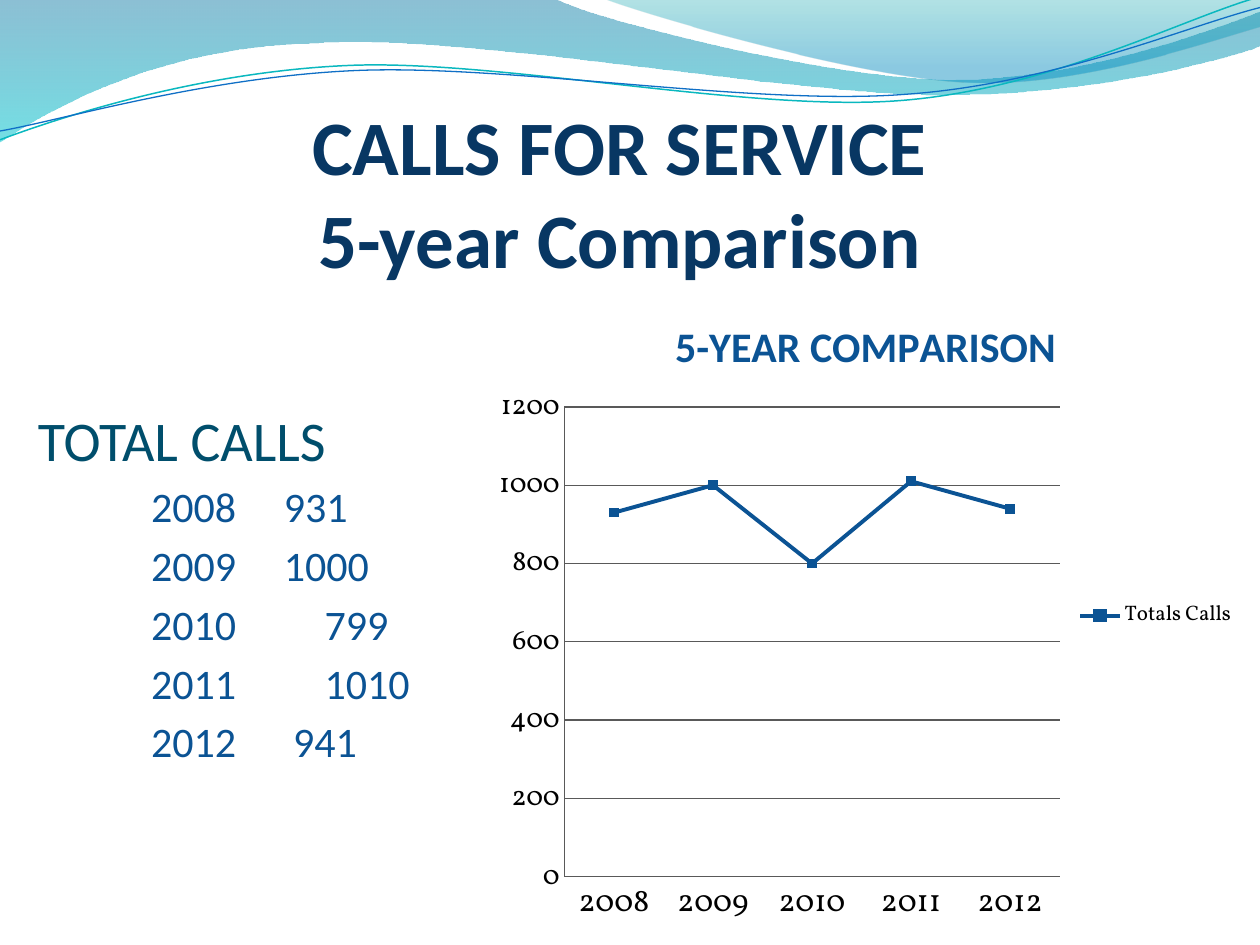
from lxml.etree import SubElement as Sub
from pptx import Presentation
from pptx.chart.data import CategoryChartData as Data
from pptx.dml.color import RGBColor as Rgb
from pptx.enum.chart import XL_CHART_TYPE as Kind, XL_LEGEND_POSITION as Side
from pptx.enum.chart import XL_MARKER_STYLE as Mark, XL_TICK_MARK as Tick
from pptx.enum.text import MSO_ANCHOR as Anchor, MSO_AUTO_SIZE as Fit, PP_ALIGN as Align
from pptx.oxml import parse_xml
from pptx.oxml.ns import nsdecls, qn
from pptx.util import Emu, Inches, Pt

# Content
TITLE = "CALLS FOR SERVICE\v5-year Comparison"
HEAD = "TOTAL CALLS"
# year, calls, extra gap between them in points
ROWS = [("2008", "931", 21.7), ("2009", "1000", 21.7), ("2010", "799", 45),
        ("2011", "1010", 45), ("2012", "941", 27.1)]
CHART = {"title": "5-YEAR COMPARISON", "name": "Totals Calls",
         "vals": [930, 1000, 800, 1010, 940]}

# Theme: colours and type
THEME = {
    "title": {"name": "Calibri", "size": Pt(44), "bold": True, "color": "083763"},
    "head": {"name": "Calibri", "size": Pt(32), "color": "004E6C"},
    "row": {"name": "Calibri", "size": Pt(24), "color": "0B5394"},
    "label": {"name": "Calibri", "size": Pt(24), "bold": True, "color": "0B5394"},
    "chart": {"name": "Vollkorn", "size": Pt(10), "color": "000000"},
    "cats": {"size": Pt(18)}, "vals": {"size": Pt(16)}, "key": {"size": Pt(12)},
    "line": "0B5394", "grid": "595959",
}

# Places as shares of the slide: left, top, width, height
W, H = Inches(10), Inches(7.5)
PLACE = {"title": (0.042, 0.19, 0.9, 0.11), "body": (-0.033, 0.422, 0.425, 0.487),
         "chart": (0.383, 0.308, 0.608, 0.687)}
# Plot area inside the chart, in inches
PLOT = (0.65, 0.92, 3.93, 3.73)

# Waves in inches: a pair is a straight step, six numbers are a curve
WAVES = [
    {"start": (0, 0), "steps": [
        (4.4, -0.01), (4.76, 0.17, 6.64, 0.63, 7.58, 0.63),
        (8.53, 0.63, 9.58, 0.26, 10, 0.09), (10.01, 0.36),
        (9.83, 0.44, 8.7, 0.76, 7.46, 0.75), (6.22, 0.75, 3.82, 0.28, 2.57, 0.34),
        (1.29, 0.36, 0.46, 0.83, -0.01, 1.13), (0, 0)],
     "fill": [(0, "0074A1", 45), (1, "00C6CF", 55)]},
    {"start": (4.79, -0.01), "steps": [
        (5.09, 0.11, 6.82, 0.62, 7.69, 0.65),
        (8.56, 0.69, 9.61, 0.32, 10, 0.21), (10, 0), (4.79, -0.01)],
     "fill": [(0, "00A1A9", 30), (0.8, "008BBF", 45)]},
    {"start": (0, 1.11), "steps": [
        (0.48, 0.93, 1.58, 0.57, 2.77, 0.52), (3.95, 0.47, 5.93, 0.89, 7.13, 0.8),
        (8.33, 0.71, 9.38, 0.15, 9.98, -0.02)],
     "line": ("0AB8BF", 0.85)},
    {"start": (0, 1.04), "steps": [
        (0.47, 0.96, 1.64, 0.61, 2.83, 0.56), (4.03, 0.51, 5.97, 0.84, 7.17, 0.75),
        (8.36, 0.67, 9.41, 0.21, 10, 0.06)],
     "line": ("0F6FC6", 0.75)},
]


def put(obj, vals):
    for key, val in vals.items():
        if key == "color":
            obj.color.rgb = Rgb.from_string(val)
        else:
            setattr(obj, key, val)


def box(name):
    return [Emu(round(part * size)) for part, size in zip(PLACE[name], (W, H, W, H))]


def move(shape, name):
    put(shape, dict(zip(("left", "top", "width", "height"), box(name))))


def bend(shape, steps):
    """Turn the straight steps that have handles into curves."""
    lines = list(shape._element.spPr.iter(qn("a:lnTo")))
    for node, step in zip(lines, steps):
        if len(step) == 6:
            curve = node.makeelement(qn("a:cubicBezTo"))
            for x, y in zip(step[::2], step[1::2]):
                Sub(curve, qn("a:pt"), x=str(Inches(x) - shape.left),
                    y=str(Inches(y) - shape.top))
            node.getparent().replace(node, curve)


def wave(slide, rank, start, steps, fill=None, line=None):
    pen = slide.shapes.build_freeform(*map(Inches, start), scale=1.0)
    ends = [tuple(map(Inches, step[-2:])) for step in steps]
    pen.add_line_segments(ends, close=bool(fill))
    shape = pen.convert_to_shape()
    bend(shape, steps)
    shape.shadow.inherit = False
    if fill:
        shape.line.fill.background()
        shape.fill.gradient()
        shape.fill.gradient_angle = 270
        for stop, (pos, tint, _) in zip(shape.fill.gradient_stops, fill):
            put(stop, {"position": pos, "color": tint})
        tints = shape._element.spPr.iter(qn("a:srgbClr"))
        for node, (_, _, alpha) in zip(list(tints), fill):
            Sub(node, qn("a:alpha"), val=str(alpha * 1000))
    else:
        shape.fill.background()
        put(shape.line, {"color": line[0], "width": Pt(line[1])})
    slide.shapes._spTree.insert(2 + rank, shape._element)


def write(para, parts, style, left):
    for part in parts:
        run = para.add_run()
        run.text = part
        put(run.font, THEME[style])
    put(para, {"alignment": Align.LEFT, "space_before": Pt(4.8)})
    props = para._p.get_or_add_pPr()
    props.set("marL", str(Inches(left)))
    props.set("indent", "0")
    Sub(props, qn("a:buNone"))


def graph(slide):
    data = Data()
    data.categories = [row[0] for row in ROWS]
    data.add_series(CHART["name"], CHART["vals"])
    frame = slide.shapes.add_chart(Kind.LINE_MARKERS, *box("chart"), data)
    chart = frame.chart

    def ink(line, tint, width):
        put(line, {"color": tint, "width": Pt(width)})

    # Text and key
    put(chart.font, {k: v for k, v in THEME["chart"].items() if k != "color"})
    chart.font.color.rgb = Rgb.from_string(THEME["chart"]["color"])
    put(chart, {"has_title": True, "has_legend": True})
    chart.chart_title.text_frame.text = CHART["title"]
    put(chart.chart_title.text_frame.paragraphs[0].runs[0].font, THEME["label"])
    put(chart.legend, {"position": Side.RIGHT, "include_in_layout": False})
    put(chart.legend.font, THEME["key"])

    # Axes
    for axis, style in ((chart.category_axis, "cats"), (chart.value_axis, "vals")):
        put(axis, {"major_tick_mark": Tick.NONE, "minor_tick_mark": Tick.NONE})
        put(axis.tick_labels.font, THEME[style])
        ink(axis.format.line, THEME["grid"], 0.75)
    put(chart.value_axis, {"minimum_scale": 0, "maximum_scale": 1200,
                           "major_unit": 200, "has_major_gridlines": True})
    ink(chart.value_axis.major_gridlines.format.line, THEME["grid"], 0.75)

    # Series
    chart.plots[0].vary_by_categories = False
    line = chart.plots[0].series[0]
    line.smooth = False
    ink(line.format.line, THEME["line"], 2.25)
    put(line.marker, {"style": Mark.SQUARE, "size": 5})
    line.marker.format.fill.solid()
    line.marker.format.fill.fore_color.rgb = Rgb.from_string(THEME["line"])
    ink(line.marker.format.line, THEME["line"], 0.75)

    # Fixed place of the plot
    area = chart._chartSpace.chart.plotArea
    for old in area.findall(qn("c:layout")):
        area.remove(old)
    sizes = (frame.width, frame.height) * 2
    parts = "".join(f'<c:{key} val="{Inches(part) / size:.4f}"/>'
                    for key, part, size in zip("xywh", PLOT, sizes))
    area.insert(0, parse_xml(
        f'<c:layout {nsdecls("c")}><c:manualLayout><c:layoutTarget val="inner"/>'
        f'<c:xMode val="edge"/><c:yMode val="edge"/>{parts}</c:manualLayout></c:layout>'))


def main():
    deck = Presentation()
    put(deck, {"slide_width": W, "slide_height": H})
    slide = deck.slides.add_slide(deck.slide_layouts[1])
    for rank, item in enumerate(WAVES):
        wave(slide, rank, **item)

    # Title
    title, body = slide.shapes.title, slide.placeholders[1]
    move(title, "title")
    frame = title.text_frame
    frame.text = TITLE
    put(frame, {"vertical_anchor": Anchor.BOTTOM, "auto_size": Fit.NONE, "margin_left": 0,
                "margin_right": 0, "margin_top": Inches(0.05), "margin_bottom": 0})
    frame.paragraphs[0].alignment = Align.CENTER
    for run in frame.paragraphs[0].runs:
        put(run.font, THEME["title"])

    # Yearly totals: letter spacing on the space sets each gap
    move(body, "body")
    frame = body.text_frame
    put(frame, {"auto_size": Fit.NONE, "vertical_anchor": Anchor.TOP})
    write(frame.paragraphs[0], [HEAD], "head", 0.53)
    for year, calls, gap in ROWS:
        para = frame.add_paragraph()
        write(para, [year, " ", calls], "row", 1.43)
        para.runs[1].font._element.set("spc", str(round(gap * 100)))

    graph(slide)
    deck.save("out.pptx")


if __name__ == "__main__":
    main()
